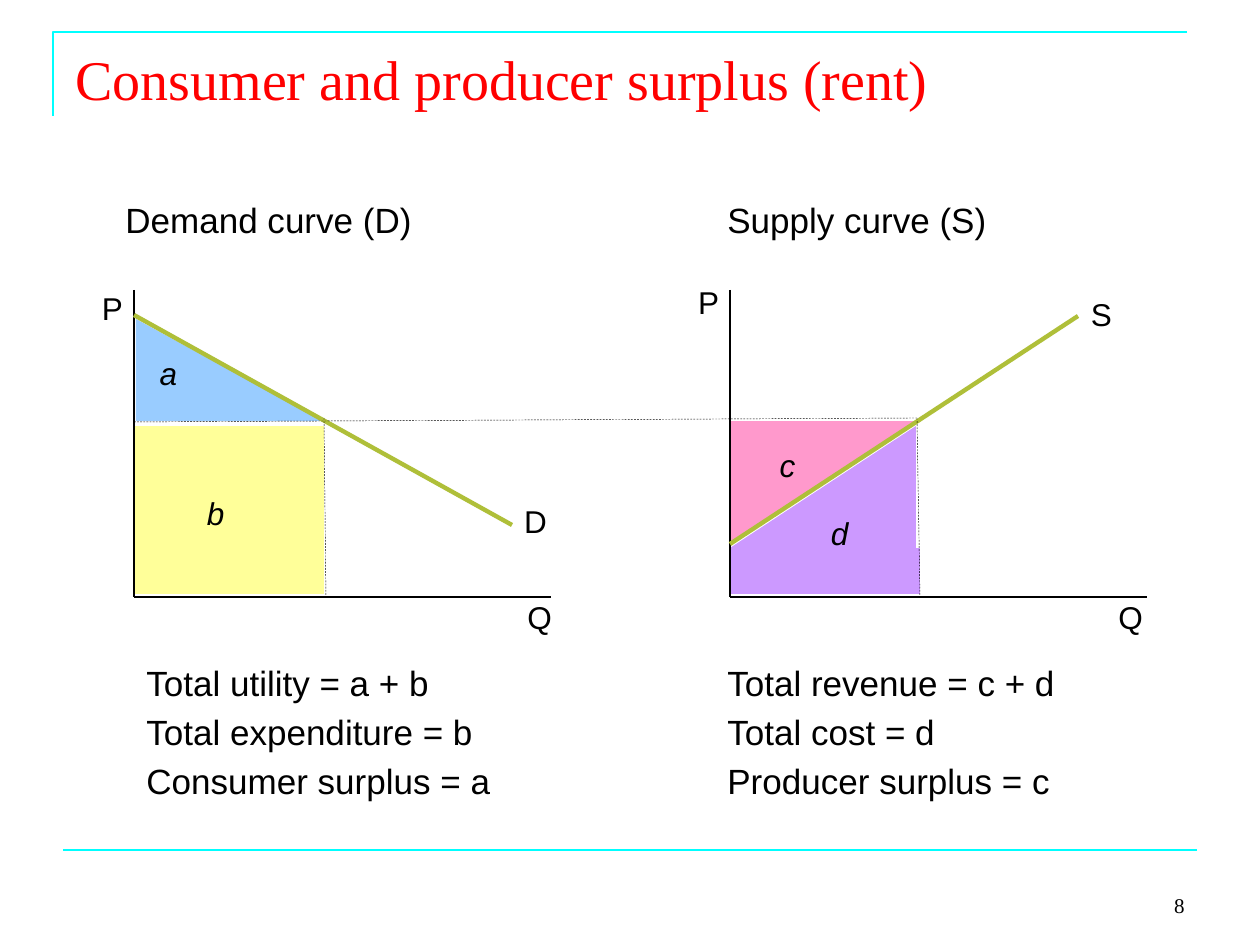
from lxml import etree
from pptx import Presentation
from pptx import util as u
from pptx.dml.color import RGBColor
from pptx.enum import dml, shapes, text
from pptx.oxml.ns import qn

SCALE = 914400 / 126
BLACK = RGBColor(0, 0, 0)
RED = RGBColor(0xFF, 0, 0)
CYAN = RGBColor(0, 0xFF, 0xFF)
OLIVE = RGBColor(0xAF, 0xBF, 0x39)
BLUE = RGBColor(0x99, 0xCC, 0xFF)
YELLOW = RGBColor(0xFF, 0xFF, 0x99)
PINK = RGBColor(0xFF, 0x99, 0xCC)
PURPLE = RGBColor(0xCC, 0x99, 0xFF)
PANEL_TOP, AXIS_WIDTH, AXIS_HEIGHT = 290, 417, 307
DEMAND_LEFT, SUPPLY_LEFT = 134, 730


def px(value):
    """Convert pixels to EMU."""
    return u.Emu(round(value * SCALE))


def set_values(target, values):
    """Set each attribute of the target from a dict."""
    for name, value in values.items():
        setattr(target, name, value)


def add_line(slide, start, end, color=BLACK, width=0.75, dash=None):
    """Draw a straight line between two points."""
    line = slide.shapes.add_connector(
        shapes.MSO_CONNECTOR.STRAIGHT, *map(px, (*start, *end)))
    line.line.color.rgb = color
    set_values(line.line, {"width": u.Pt(width), "dash_style": dash})
    etree.SubElement(line._element.spPr, qn("a:effectLst"))


def add_area(slide, kind, box, color):
    """Draw a filled preset shape without an outline."""
    shape = slide.shapes.add_shape(kind, *map(px, box))
    shape.shadow.inherit = False
    shape.fill.solid()
    shape.fill.fore_color.rgb = color
    shape.line.fill.background()
    return shape


def add_outline(slide, points, close):
    """Build a freeform through the given points."""
    corners = [(px(x), px(y)) for x, y in points]
    builder = slide.shapes.build_freeform(*corners[0], scale=1.0)
    builder.add_line_segments(corners[1:], close=close)
    shape = builder.convert_to_shape()
    shape.shadow.inherit = False
    return shape


def add_triangle(slide, left, top, points, color):
    """Fill a triangle given relative to the panel corner."""
    shape = add_outline(slide, [(left + x, top + y) for x, y in points], True)
    shape.fill.solid()
    shape.fill.fore_color.rgb = color
    shape.line.fill.background()


def add_text(slide, box, lines, font, color=BLACK, frame=None, paragraph_format=None,
             space=None, tab=None):
    """Place paragraphs that share one format in a text box."""
    text_frame = slide.shapes.add_textbox(*map(px, box)).text_frame
    set_values(text_frame, {"word_wrap": True, **(frame or {})})
    for index, line in enumerate(lines):
        paragraph = text_frame.paragraphs[0] if index == 0 else text_frame.add_paragraph()
        set_values(paragraph, paragraph_format or {})
        properties = paragraph._p.get_or_add_pPr()
        if space:
            before = etree.SubElement(properties, qn("a:spcBef"))
            etree.SubElement(before, qn("a:spcPct"), val=str(space * 1000))
        if tab:
            stops = etree.SubElement(properties, qn("a:tabLst"))
            etree.SubElement(stops, qn("a:tab"), pos=str(px(tab)), algn="l")
        run = paragraph.add_run()
        run.text = line
        set_values(run.font, font)
        run.font.color.rgb = color


def add_panel(slide, left, top, curve, guide, labels):
    """Draw axes, curve, quantity guide and labels of one market side."""
    origin = (left, top + AXIS_HEIGHT)
    add_line(slide, (left, top), origin)
    add_line(slide, origin, (left + AXIS_WIDTH, top + AXIS_HEIGHT))
    for points, style in ((curve, {"color": OLIVE, "width": 2.5}),
                          (guide, {"width": 0.25, "dash": dml.MSO_LINE.DASH})):
        start, end = [(left + x, top + y) for x, y in points]
        add_line(slide, start, end, **style)
    for label, x, y in labels:
        font = {"name": "Arial", "size": u.Pt(18), "italic": label in "abcd"}
        add_text(slide, (left + x, top + y, 69, 50), [label], font, space=50,
                 paragraph_format={"alignment": text.PP_ALIGN.CENTER})


def add_demand(slide, left, top):
    """Draw the demand side with consumer surplus and expenditure."""
    add_area(slide, shapes.MSO_SHAPE.RECTANGLE, (left, top + 136, 190, 168), YELLOW)
    add_triangle(slide, left, top, [(2, 29), (2, 131), (189, 131)], BLUE)
    add_panel(slide, left, top, [(0, 25), (378, 235)], [(190, 128), (192, 307)],
              [("P", -56, -7), ("Q", 371, 302), ("a", 0, 58),
               ("b", 47, 198), ("D", 367, 206)])


def add_supply(slide, left, top):
    """Draw the supply side with producer surplus and cost."""
    cost = add_area(slide, shapes.MSO_SHAPE.RIGHT_TRIANGLE,
                    (left, top + 136, 186, 122), PURPLE)
    cost._element.spPr.find(qn("a:xfrm")).set("flipH", "1")
    add_area(slide, shapes.MSO_SHAPE.RECTANGLE, (left, top + 258, 190, 46), PURPLE)
    add_triangle(slide, left, top, [(1, 131), (1, 252), (187, 131)], PINK)
    add_panel(slide, left, top, [(0, 254), (348, 26)], [(187, 128), (190, 307)],
              [("P", -56, -13), ("Q", 366, 302), ("c", 23, 150),
               ("d", 75, 218), ("S", 337, -1)])


def add_page_frame(slide):
    """Draw the border lines, title and page number."""
    border = add_outline(slide, [(53, 116), (53, 32), (1187, 32)], False)
    border.fill.background()
    border.line.color.rgb = CYAN
    border.line.width = u.Pt(1.5)
    add_line(slide, (63, 850), (1197, 850), CYAN, 1.5)
    serif = {"name": "Times New Roman"}
    add_text(slide, (63, 38, 1134, 98), ["Consumer and producer surplus (rent)"],
             {**serif, "size": u.Pt(32)}, RED)
    add_text(slide, (903, 861, 294, 63), ["8"], {**serif, "size": u.Pt(12)},
             frame={"vertical_anchor": text.MSO_ANCHOR.BOTTOM},
             paragraph_format={"alignment": text.PP_ALIGN.RIGHT})


def add_captions(slide):
    """Write the two-column headings and totals."""
    font = {"name": "Arial", "size": u.Pt(20)}
    add_text(slide, (134, 665, 1052, 149),
             ["Total utility = a + b\tTotal revenue = c + d",
              "Total expenditure = b\tTotal cost = d",
              "Consumer surplus = a\tProducer surplus = c"],
             font, paragraph_format={"line_spacing": 0.75}, space=50, tab=581)
    add_text(slide, (113, 192, 1032, 54), ["Demand curve (D)\tSupply curve (S)"],
             font, space=50, tab=602)


def main():
    """Build and save the slide."""
    presentation = Presentation()
    set_values(presentation, {"slide_width": u.Inches(10), "slide_height": u.Inches(7.5)})
    slide = presentation.slides.add_slide(presentation.slide_layouts[6])
    add_page_frame(slide)
    add_demand(slide, DEMAND_LEFT, PANEL_TOP)
    add_supply(slide, SUPPLY_LEFT, PANEL_TOP)
    add_line(slide, (DEMAND_LEFT, 422), (917, 418), width=0.25, dash=dml.MSO_LINE.DASH)
    add_captions(slide)
    presentation.save("out.pptx")


if __name__ == "__main__":
    main()
